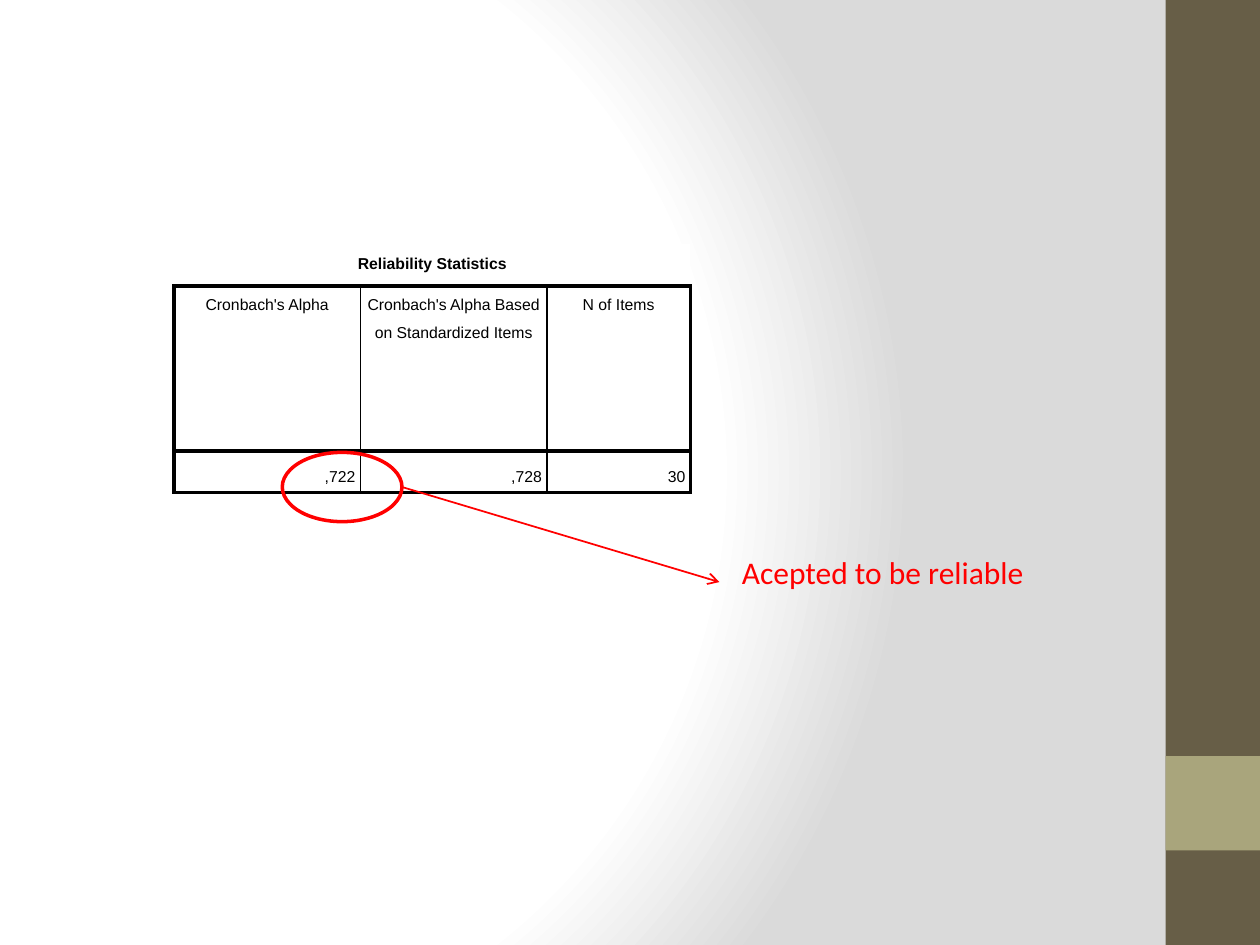
from dataclasses import dataclass

import pptx
import pptx.dml.color
import pptx.enum.shapes
import pptx.enum.text
import pptx.oxml
import pptx.oxml.ns
import pptx.util
from lxml import etree

RGBColor = pptx.dml.color.RGBColor
Inches = pptx.util.Inches
Pt = pptx.util.Pt
ALIGN = pptx.enum.text.PP_ALIGN
ANCHOR = pptx.enum.text.MSO_ANCHOR
SHAPE = pptx.enum.shapes.MSO_SHAPE

WHITE = RGBColor(0xFF, 0xFF, 0xFF)
GREY = RGBColor(0xDA, 0xDA, 0xDA)
BLACK = RGBColor(0, 0, 0)
RED = RGBColor(0xFF, 0, 0)
BROWN = RGBColor(0x67, 0x5E, 0x47)
OLIVE = RGBColor(0xA9, 0xA5, 0x7C)

WIDTH, HEIGHT = Inches(10), Inches(7.5)
THICK, THIN = 2.25, 1


@dataclass
class Band:
    """Side band; top and height are shares of the slide height."""
    top: float
    height: float
    color: RGBColor


@dataclass
class Row:
    height: float
    texts: tuple[str, ...]
    align: ALIGN
    anchor: ANCHOR
    bold: bool = False
    boxed: bool = True


BANDS = [Band(0, 1, BROWN), Band(0.8, 0.1, OLIVE)]
COLUMN_WIDTHS = [1.48, 1.48, 1.14]
ROWS = [
    Row(0.33, ("Reliability Statistics", "", ""), ALIGN.CENTER, ANCHOR.TOP, bold=True, boxed=False),
    Row(1.31, ("Cronbach's Alpha", "Cronbach's Alpha Based on Standardized Items", "N of Items"),
        ALIGN.CENTER, ANCHOR.TOP),
    Row(0.33, (",722", ",728", "30"), ALIGN.RIGHT, ANCHOR.MIDDLE),
]


def set_format(target: object, values: dict) -> None:
    for name, value in values.items():
        setattr(target, name, value)


def paint_background(slide) -> None:
    slide.background.fill.gradient()
    gradient = slide.element.find(".//" + pptx.oxml.ns.qn("a:gradFill"))
    stops = "".join(
        f'<a:gs pos="{share * 1000}"><a:srgbClr val="{color}"/></a:gs>'
        for share, color in [(0, WHITE), (75, WHITE), (100, GREY)]
    )
    radial = pptx.oxml.parse_xml(
        f'<a:gradFill {pptx.oxml.ns.nsdecls("a")} rotWithShape="1"><a:gsLst>{stops}</a:gsLst>'
        '<a:path path="circle"><a:fillToRect l="20000" t="50000" r="100000" b="50000"/></a:path>'
        "</a:gradFill>"
    )
    gradient.getparent().replace(gradient, radial)


def draw_band(slide, band: Band) -> None:
    shape = slide.shapes.add_shape(
        SHAPE.RECTANGLE, int(WIDTH * 0.925), int(HEIGHT * band.top),
        int(WIDTH * 0.075), int(HEIGHT * band.height))
    shape.shadow.inherit = False
    shape.fill.solid()
    shape.fill.fore_color.rgb = band.color
    shape.line.fill.background()


def set_borders(cell, widths: dict[str, float]) -> None:
    """Draw each side in black; a width of 0 means no line."""
    properties = cell._tc.get_or_add_tcPr()
    for index, (side, width) in enumerate(widths.items()):
        paint = f'<a:solidFill><a:srgbClr val="{BLACK}"/></a:solidFill>' if width else "<a:noFill/>"
        properties.insert(index, pptx.oxml.parse_xml(
            f'<a:ln{side} {pptx.oxml.ns.nsdecls("a")} w="{int(Pt(width))}">{paint}</a:ln{side}>'))


def fill_cell(cell, text: str, row: Row, column: int) -> None:
    set_format(cell, {"margin_left": 0, "margin_top": 0, "margin_right": 0, "margin_bottom": 0,
                      "vertical_anchor": row.anchor})
    cell.fill.solid()
    cell.fill.fore_color.rgb = WHITE
    last = len(COLUMN_WIDTHS) - 1
    set_borders(cell, {
        "L": (THIN if column else THICK) if row.boxed else 0,
        "R": (THIN if column < last else THICK) if row.boxed else 0,
        "T": THICK if row.boxed else 0,
        "B": THICK,
    })
    paragraph = cell.text_frame.paragraphs[0]
    set_format(paragraph, {"text": text, "alignment": row.align, "line_spacing": Pt(16)})
    indent = str(int(Inches(0.04)))
    for name, value in {"marL": indent, "marR": indent, "indent": "0"}.items():
        paragraph._p.get_or_add_pPr().set(name, value)
    set_format(paragraph.font, {"name": "Arial", "size": Pt(9), "bold": row.bold})
    paragraph.font.color.rgb = BLACK


def draw_table(slide) -> None:
    table = slide.shapes.add_table(
        len(ROWS), len(COLUMN_WIDTHS), Inches(1.38), Inches(1.94),
        Inches(sum(COLUMN_WIDTHS)), Inches(sum(row.height for row in ROWS))).table
    set_format(table, {"first_row": False, "horz_banding": False})
    for column, width in enumerate(COLUMN_WIDTHS):
        table.columns[column].width = Inches(width)
    for index, row in enumerate(ROWS):
        table.rows[index].height = Inches(row.height)
        for column, text in enumerate(row.texts):
            fill_cell(table.cell(index, column), text, row, column)
    table.cell(0, 0).merge(table.cell(0, len(COLUMN_WIDTHS) - 1))


def draw_callout(slide) -> None:
    # Ring around the alpha value
    ring = slide.shapes.add_shape(
        SHAPE.OVAL, Inches(2.24), Inches(3.59), Inches(0.95), Inches(0.55))
    ring.shadow.inherit = False
    ring.fill.background()
    ring.line.color.rgb = RED
    ring.line.width = Pt(2)

    # Verdict
    verdict = slide.shapes.add_textbox(Inches(5.79), Inches(4.34), Inches(2.56), Inches(0.4))
    set_format(verdict.text_frame, {"word_wrap": False,
                                    "auto_size": pptx.enum.text.MSO_AUTO_SIZE.SHAPE_TO_FIT_TEXT})
    paragraph = verdict.text_frame.paragraphs[0]
    paragraph.text = "Acepted to be reliable"
    set_format(paragraph.font, {"name": "Calibri", "size": Pt(18)})
    paragraph.font.color.rgb = RED

    # Arrow from the ring to the verdict
    arrow = slide.shapes.add_connector(
        pptx.enum.shapes.MSO_CONNECTOR.STRAIGHT,
        ring.left + ring.width, ring.top + ring.height // 2, Inches(5.71), Inches(4.62))
    arrow.line.color.rgb = RED
    arrow.line.width = Pt(1)
    line = arrow.line._get_or_add_ln()
    etree.SubElement(line, pptx.oxml.ns.qn("a:tailEnd")).set("type", "arrow")
    etree.SubElement(arrow.element.spPr, pptx.oxml.ns.qn("a:effectLst"))


def main() -> None:
    presentation = pptx.Presentation()
    set_format(presentation, {"slide_width": WIDTH, "slide_height": HEIGHT})
    slide = presentation.slides.add_slide(presentation.slide_layouts[6])
    paint_background(slide)
    for band in BANDS:
        draw_band(slide, band)
    draw_table(slide)
    draw_callout(slide)
    presentation.save("out.pptx")


if __name__ == "__main__":
    main()
